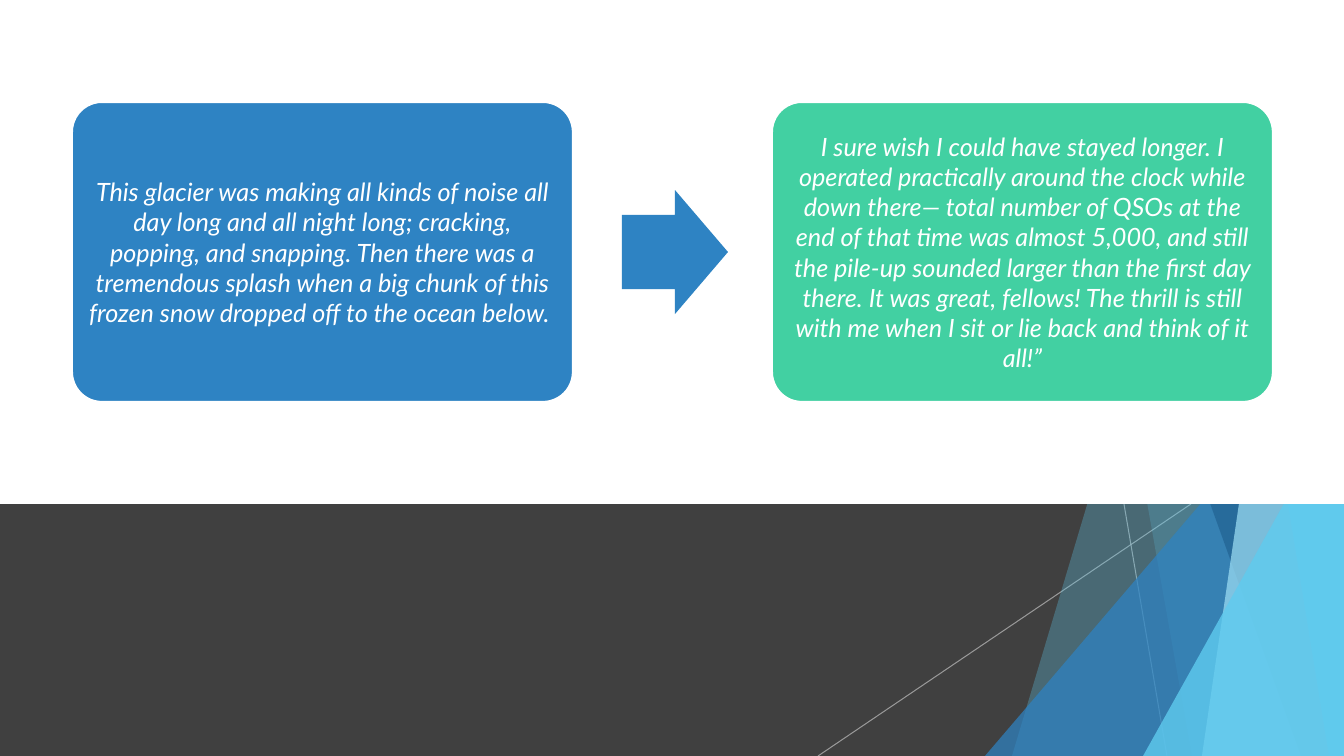
from dataclasses import dataclass

from lxml import etree
from pptx import Presentation
from pptx import util as u
from pptx.dml.color import RGBColor
from pptx.enum import shapes, text
from pptx.oxml import ns

EMU_PER_PX = 914400 / 100.8
SLIDE_W, SLIDE_H = 1344, 756
BAND_TOP = 504
CARD_TOP, CARD_W, CARD_H, CARD_INSET = 102, 501, 300, 7

COLORS = {
    "white": "FFFFFF",
    "charcoal": "404040",
    "silver": "BFBFBF",
    "blue": "2E83C3",
    "navy": "226292",
    "sky": "5FCBEF",
    "ice": "9FE0F5",
    "green": "42D0A2",
}


@dataclass(frozen=True)
class Facet:
    """Translucent pane reaching from its slanted left edge to the slide's right side."""
    top_x: int
    bottom_x: int
    color: str
    opacity: int


@dataclass(frozen=True)
class Peak:
    """Translucent right triangle standing in the bottom right corner."""
    left: int
    top: int
    color: str
    opacity: int


@dataclass(frozen=True)
class Ray:
    top_x: int
    bottom_x: int


@dataclass(frozen=True)
class Card:
    left: int
    color: str
    quote: str


CRYSTALS = [
    Facet(1238, 1012, "sky", 30),
    Facet(1058, 1192, "sky", 20),
    Peak(985, 336, "blue", 72),
    Facet(1029, 1301, "navy", 70),
    Facet(1313, 1202, "ice", 70),
    Facet(1206, 1329, "sky", 65),
    Peak(1143, 396, "sky", 80),
]
RAYS = [Ray(1124, 1167), Ray(1191, 818)]
CARDS = [
    Card(72, "blue",
         "This glacier was making all kinds of noise all day long and all night long; "
         "cracking, popping, and snapping. Then there was a tremendous splash when a big "
         "chunk of this frozen snow dropped off to the ocean below. "),
    Card(772, "green",
         "I sure wish I could have stayed longer. I operated practically around the clock "
         "while down there— total number of QSOs at the end of that time was almost 5,000, "
         "and still the pile-up sounded larger than the first day there. It was great, "
         "fellows! The thrill is still with me when I sit or lie back and think of it all!”"),
]


def px(length: int) -> u.Emu:
    return u.Emu(round(length * EMU_PER_PX))


def rgb(color: str) -> RGBColor:
    return RGBColor.from_string(COLORS[color])


def paint(shape, color: str, opacity: int = 100) -> None:
    """Give the shape a plain fill with neither outline nor shadow."""
    shape.shadow.inherit = False
    shape.line.fill.background()
    shape.fill.solid()
    shape.fill.fore_color.rgb = rgb(color)
    if opacity < 100:
        set_opacity(shape.fill._xPr, opacity)


def set_opacity(properties, opacity: int) -> None:
    solid_color = properties.find(".//" + ns.qn("a:srgbClr"))
    etree.SubElement(solid_color, ns.qn("a:alpha"), val=str(opacity * 1000))


def add_preset(slide, kind, left: int, top: int, width: int, height: int,
               color: str, opacity: int = 100):
    shape = slide.shapes.add_shape(kind, px(left), px(top), px(width), px(height))
    paint(shape, color, opacity)
    return shape


def add_ray(slide, ray: Ray) -> None:
    line = slide.shapes.add_connector(
        shapes.MSO_CONNECTOR.STRAIGHT,
        px(ray.top_x), px(BAND_TOP), px(ray.bottom_x), px(SLIDE_H))
    line.line.width = u.Pt(0.75)
    line.line.color.rgb = rgb("silver")
    properties = line._element.spPr
    set_opacity(properties, 70)
    etree.SubElement(properties, ns.qn("a:effectLst"))


def add_facet(slide, facet: Facet) -> None:
    outline = slide.shapes.build_freeform(facet.top_x, 0, scale=EMU_PER_PX)
    outline.add_line_segments(
        [(SLIDE_W, 0), (SLIDE_W, SLIDE_H), (facet.bottom_x, SLIDE_H)], close=True)
    paint(outline.convert_to_shape(), facet.color, facet.opacity)


def add_peak(slide, peak: Peak) -> None:
    triangle = add_preset(
        slide, shapes.MSO_SHAPE.ISOSCELES_TRIANGLE, peak.left, peak.top,
        SLIDE_W - peak.left, SLIDE_H - peak.top, peak.color, peak.opacity)
    triangle.adjustments[0] = 1


def add_card(slide, card: Card) -> None:
    box = add_preset(slide, shapes.MSO_SHAPE.ROUNDED_RECTANGLE,
                     card.left, CARD_TOP, CARD_W, CARD_H, card.color)
    box.adjustments[0] = 0.1
    box.line.color.rgb = rgb("white")
    box.line.width = u.Pt(1.5)

    frame = box.text_frame
    frame.word_wrap = True
    frame.vertical_anchor = text.MSO_ANCHOR.MIDDLE
    frame.margin_left = frame.margin_right = px(CARD_INSET)
    frame.margin_top = frame.margin_bottom = px(CARD_INSET)
    frame.text = card.quote
    paragraph = frame.paragraphs[0]
    paragraph.alignment = text.PP_ALIGN.CENTER
    font = paragraph.runs[0].font
    font.name = "Lato"
    font.size = u.Pt(18)
    font.italic = True
    font.color.rgb = rgb("white")


def add_arrow(slide) -> None:
    arrow = add_preset(slide, shapes.MSO_SHAPE.RIGHT_ARROW, 622, 190, 106, 124, "blue")
    arrow.adjustments[0] = 0.6
    arrow.adjustments[1] = 0.5


def main() -> None:
    deck = Presentation()
    deck.slide_width, deck.slide_height = px(SLIDE_W), px(SLIDE_H)
    slide = deck.slides.add_slide(deck.slide_layouts[6])

    add_preset(slide, shapes.MSO_SHAPE.RECTANGLE,
               0, BAND_TOP, SLIDE_W, SLIDE_H - BAND_TOP, "charcoal")
    for ray in RAYS:
        add_ray(slide, ray)
    for crystal in CRYSTALS:
        if isinstance(crystal, Facet):
            add_facet(slide, crystal)
        else:
            add_peak(slide, crystal)

    # The white panel hides the crystals above the dark band.
    add_preset(slide, shapes.MSO_SHAPE.RECTANGLE, 0, 0, SLIDE_W, BAND_TOP, "white")
    for card in CARDS:
        add_card(slide, card)
    add_arrow(slide)

    deck.save("out.pptx")


if __name__ == "__main__":
    main()
